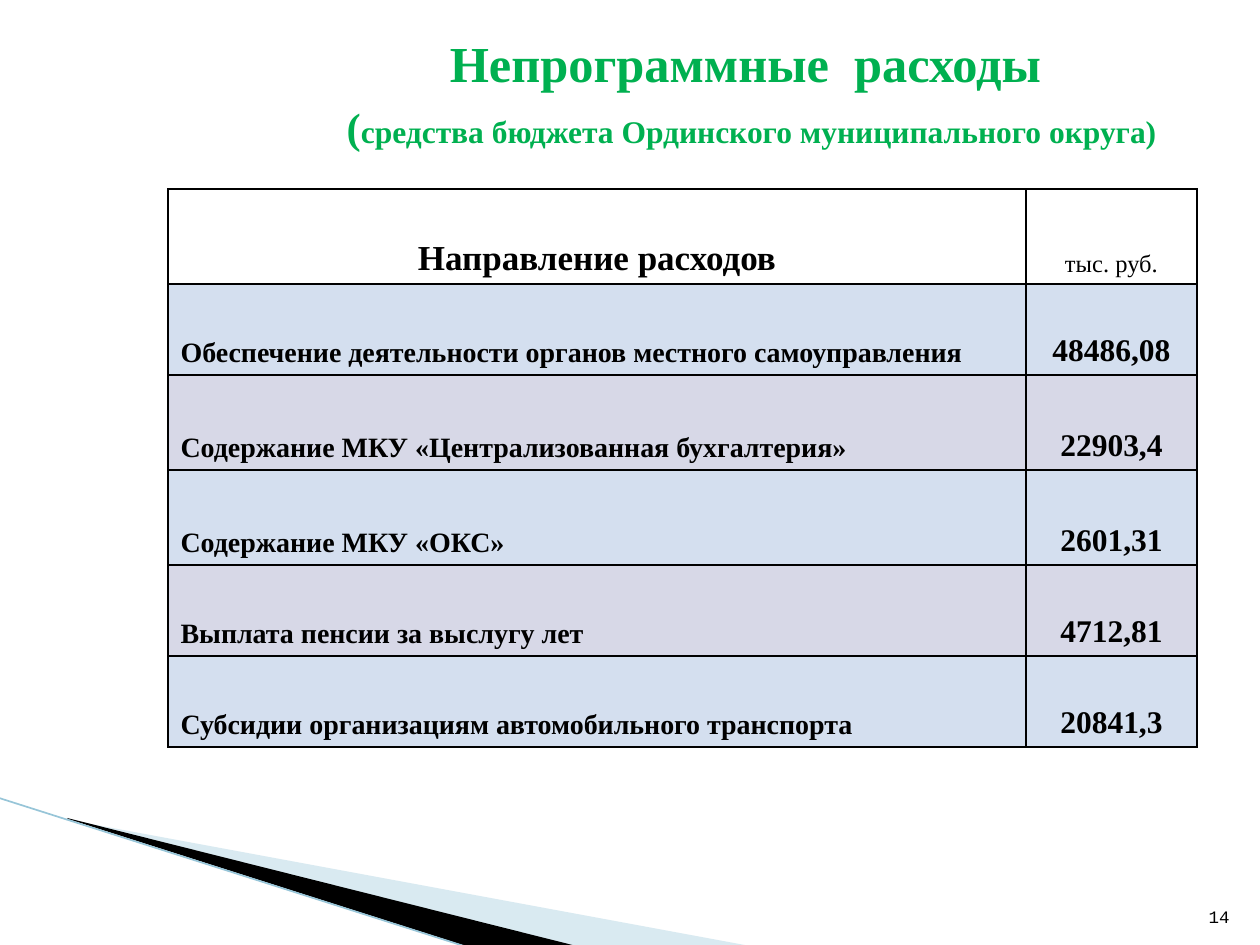
import pptx
import pptx.util
import pptx.dml.color
import pptx.enum.text
import pptx.oxml
import pptx.oxml.ns
import lxml.etree

RGB = pptx.dml.color.RGBColor
ALIGN = pptx.enum.text.PP_ALIGN
ANCHOR = pptx.enum.text.MSO_ANCHOR
qn = pptx.oxml.ns.qn

PX = 914400 / 126
WHITE = RGB(0xFF, 0xFF, 0xFF)
BLACK = RGB(0x00, 0x00, 0x00)
GREEN = RGB(0x00, 0xB0, 0x50)
SKY = RGB(0xA0, 0xCB, 0xDC)
TEAL = RGB(0x97, 0xC5, 0xD8)
BLUE = RGB(0xD4, 0xDF, 0xEF)
LILAC = RGB(0xD7, 0xD8, 0xE7)
SERIF = "Times New Roman"
MONO = "Courier New"


def emu(px):
    return pptx.util.Emu(round(px * PX))


class Page:
    def __init__(self, slide):
        self.slide = slide
        self.shapes = slide.shapes

    def style(self, run, size, color=BLACK, bold=False, face=SERIF):
        font = run.font
        font.name, font.size, font.bold = face, pptx.util.Pt(size), bold
        font.color.rgb = color

    def wedge(self, points, color, alpha=None):
        build = self.shapes.build_freeform(*points[0], scale=PX)
        build.add_line_segments(points[1:])
        shape = build.convert_to_shape()
        shape.shadow.inherit = False
        shape.fill.solid()
        shape.fill.fore_color.rgb = color
        shape.line.fill.background()
        if alpha:
            tint = shape._element.spPr.find(".//" + qn("a:srgbClr"))
            lxml.etree.SubElement(tint, qn("a:alpha"), val=str(alpha * 1000))

    def line(self, start, end, color, width):
        line = self.shapes.add_connector(1, *map(emu, start + end))
        line.line.color.rgb = color
        line.line.width = pptx.util.Pt(width)
        lxml.etree.SubElement(line._element.spPr, qn("a:effectLst"))

    def text(self, box, parts, align, anchor, fill=None, **look):
        shape = self.shapes.add_textbox(*map(emu, box))
        if fill is not None:
            shape.fill.solid()
            shape.fill.fore_color.rgb = fill
        frame = shape.text_frame
        frame.word_wrap = True
        frame.vertical_anchor = anchor
        para = frame.paragraphs[0]
        para.alignment = align
        for words, size in parts:
            count = len(para.runs)
            if count:
                para.add_run().text = words
            else:
                para.text = words
            for run in para.runs[count:]:
                self.style(run, size, **look)

    def cell(self, cell, words, size, bold, align, fill):
        cell.fill.solid()
        cell.fill.fore_color.rgb = fill
        cell.vertical_anchor = ANCHOR.BOTTOM
        cell.text = words
        para = cell.text_frame.paragraphs[0]
        para.alignment = align
        self.style(para.runs[0], size, bold=bold)
        # Borders come before the fill in the cell properties
        props = cell._tc.get_or_add_tcPr()
        for spot, side in enumerate(("a:lnL", "a:lnR", "a:lnT", "a:lnB")):
            edge = lxml.etree.Element(qn(side), w="12700")
            paint = lxml.etree.SubElement(edge, qn("a:solidFill"))
            lxml.etree.SubElement(paint, qn("a:srgbClr"), val=str(BLACK))
            props.insert(spot, edge)

    def table(self, left, top, cols, rows, data):
        frame = self.shapes.add_table(
            len(rows), len(cols), emu(left), emu(top),
            emu(sum(cols)), emu(sum(rows)))
        table = frame.table
        for col, width in zip(table.columns, cols):
            col.width = emu(width)
        for row, height in zip(table.rows, rows):
            row.height = emu(height)
        for i, (name, value) in enumerate(data):
            head = i == 0
            fill = WHITE if head else (LILAC, BLUE)[i % 2]
            self.cell(table.cell(i, 0), name, 20 if head else 16, True,
                      ALIGN.CENTER if head else ALIGN.LEFT, fill)
            self.cell(table.cell(i, 1), value, 14 if head else 18, not head,
                      ALIGN.CENTER, fill)


def main():
    deck = pptx.Presentation()
    deck.slide_width, deck.slide_height = emu(1260), emu(945)
    page = Page(deck.slides.add_slide(deck.slide_layouts[6]))

    # Corner wedges
    page.wedge([(69, 820), (750, 946), (575, 946), (69, 819)], SKY, 40)
    page.wedge([(67, 818), (576, 946), (469, 947), (68, 819)], BLACK)
    page.line((-1, 798), (467, 947), TEAL, 0.95)

    # Page number
    page.text((1192, 883, 50, 50), [("14", 10)], ALIGN.RIGHT, ANCHOR.BOTTOM,
              face=MONO)

    # Title
    page.text((294, 38, 903, 110),
              [("Непрограммные  расходы\v ", 28.8), ("(", 24.3),
               ("средства бюджета Ординского муниципального округа)", 18)],
              ALIGN.CENTER, ANCHOR.MIDDLE, WHITE, color=GREEN, bold=True)

    # Spending table
    page.table(168, 189, (858, 171), (95, 91, 95, 95, 91, 91), [
        ("Направление расходов", "тыс. руб."),
        ("Обеспечение деятельности органов местного самоуправления",
         "48486,08"),
        ("Содержание МКУ «Централизованная бухгалтерия»", "22903,4"),
        ("Содержание МКУ «ОКС»", "2601,31"),
        ("Выплата пенсии за выслугу лет", "4712,81"),
        ("Субсидии организациям автомобильного транспорта", "20841,3"),
    ])
    deck.save("out.pptx")


if __name__ == "__main__":
    main()
